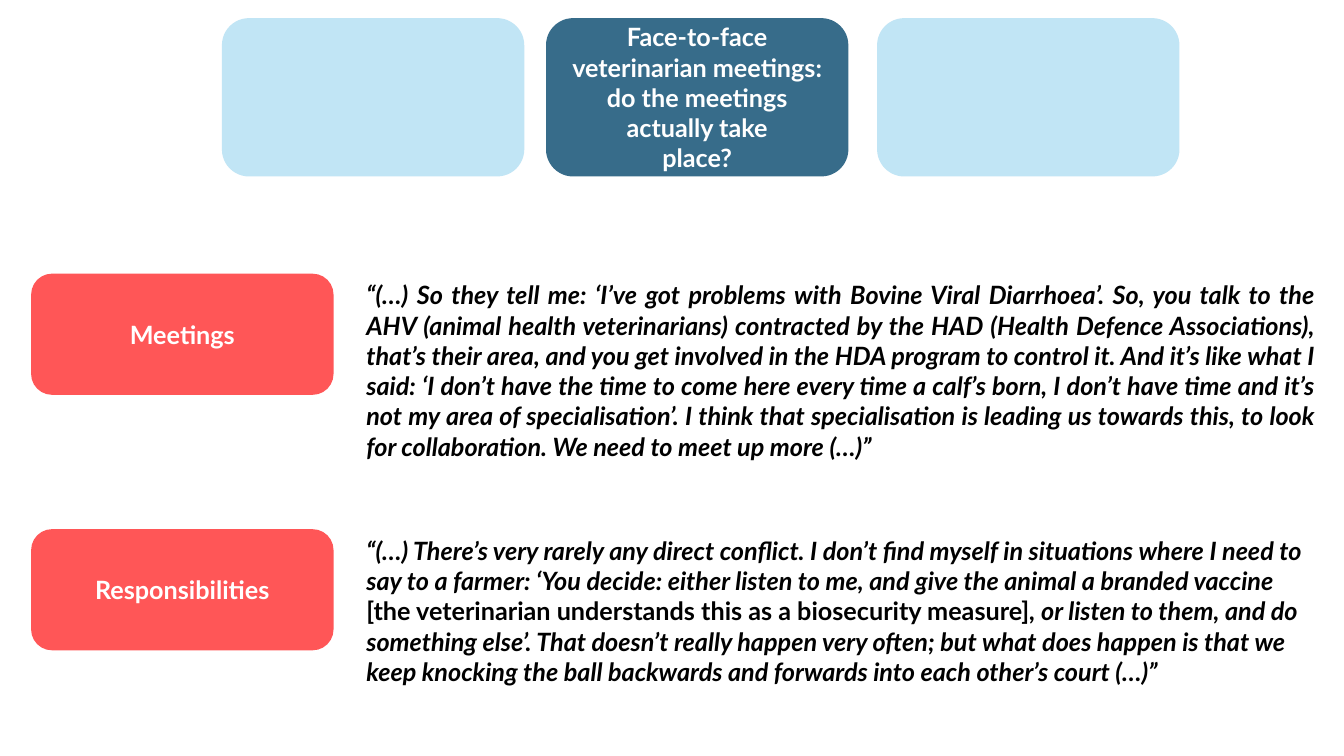
from dataclasses import dataclass

from pptx import Presentation
from pptx.dml.color import RGBColor
from pptx.enum.shapes import MSO_SHAPE
from pptx.enum.text import MSO_ANCHOR, MSO_AUTO_SIZE, PP_ALIGN
from pptx.util import Pt


@dataclass(frozen=True)
class Theme:
    font: str = "Lato"
    size: int = 18
    coral: RGBColor = RGBColor(0xFF, 0x56, 0x57)
    pale_blue: RGBColor = RGBColor(0xC1, 0xE5, 0xF5)
    deep_blue: RGBColor = RGBColor(0x37, 0x6C, 0x8A)
    white: RGBColor = RGBColor(0xFF, 0xFF, 0xFF)
    black: RGBColor = RGBColor(0, 0, 0)


theme = Theme()
BOX_WIDTH = 214.5

presentation = Presentation()
presentation.slide_width, presentation.slide_height = Pt(960), Pt(540)
slide = presentation.slides.add_slide(presentation.slide_layouts[6])


def style_run(run, color, italic=False):
    run.font.name = theme.font
    run.font.size = Pt(theme.size)
    run.font.bold = True
    run.font.italic = italic
    run.font.color.rgb = color


def add_label(text, left, top, height, color):
    """Add a rounded box with centred white text, or a plain one if text is empty."""
    shape = slide.shapes.add_shape(
        MSO_SHAPE.ROUNDED_RECTANGLE, Pt(left), Pt(top), Pt(BOX_WIDTH), Pt(height))
    shape.shadow.inherit = False
    shape.fill.solid()
    shape.fill.fore_color.rgb = color
    shape.line.color.rgb = color
    shape.line.width = Pt(1.5)
    shape.text_frame.word_wrap = True
    shape.text_frame.vertical_anchor = MSO_ANCHOR.MIDDLE
    shape.text_frame.text = text
    for paragraph in shape.text_frame.paragraphs:
        paragraph.alignment = PP_ALIGN.CENTER
        for run in paragraph.runs:
            style_run(run, theme.white)


# Topics across the top: the current one between two faded ones
topics = [
    ("", 159.25, theme.pale_blue),
    ("Face-to-face veterinarian meetings: do the meetings actually take\nplace?",
     390.75, theme.deep_blue),
    ("", 627.25, theme.pale_blue),
]
for topic, left, color in topics:
    add_label(topic, left, 13.7, 111.6, color)

# Themes with their quotes; each quote is a list of (text, italic) parts
quotes = [
    ("Meetings", 196.25, 138.25, PP_ALIGN.JUSTIFY, [
        ("“(…) So they tell me: ‘I’ve got problems with Bovine Viral Diarrhoea’. "
         "So, you talk to the AHV (animal health veterinarians) contracted by the "
         "HAD (Health Defence Associations), that’s their area, and you get involved "
         "in the HDA program to control it. And it’s like what I said: ‘I don’t have "
         "the time to come here every time a calf’s born, I don’t have time and it’s "
         "not my area of specialisation’. I think that specialisation is leading us "
         "towards this, to look for collaboration. We need to meet up more (…)”", True),
    ]),
    ("Responsibilities", 378.75, 116.5, PP_ALIGN.LEFT, [
        ("“(…) There’s very rarely any direct conflict. I don’t find myself in "
         "situations where I need to say to a farmer: ‘You decide: either listen to "
         "me, and give the animal a branded vaccine ", True),
        ("[the veterinarian understands this as a biosecurity measure]", False),
        (", or listen to them, and do something else’. That doesn’t really happen "
         "very often; but what does happen is that we keep knocking the ball "
         "backwards and forwards into each other’s court (…)”", True),
    ]),
]
for name, top, height, alignment, parts in quotes:
    add_label(name, 23, top, 85, theme.coral)
    quote_box = slide.shapes.add_textbox(Pt(254.6), Pt(top), Pt(692), Pt(height))
    quote_box.text_frame.word_wrap = True
    quote_box.text_frame.auto_size = MSO_AUTO_SIZE.SHAPE_TO_FIT_TEXT
    paragraph = quote_box.text_frame.paragraphs[0]
    paragraph.alignment = alignment
    for text, italic in parts:
        run = paragraph.add_run()
        run.text = text
        style_run(run, theme.black, italic)

presentation.save("out.pptx")
